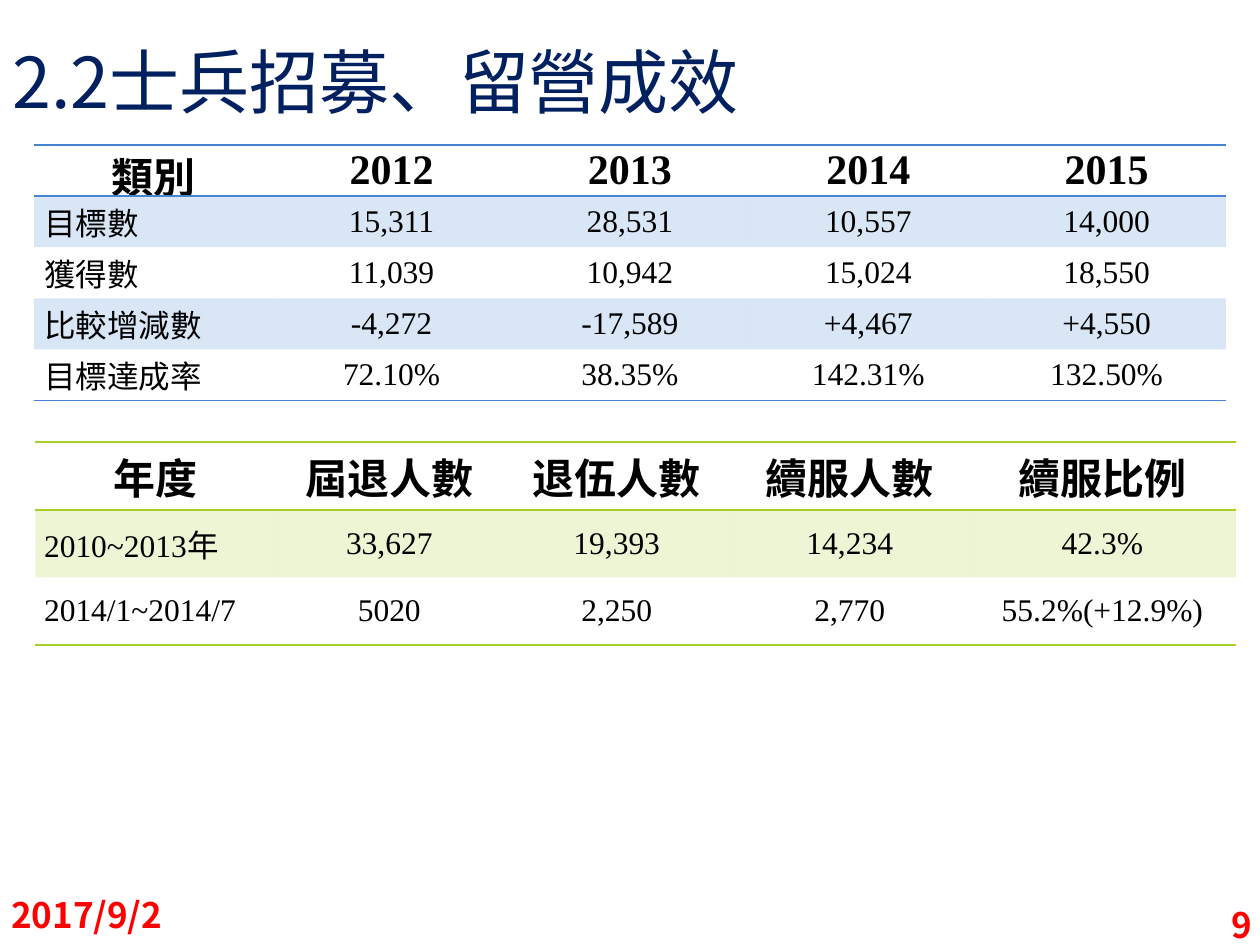
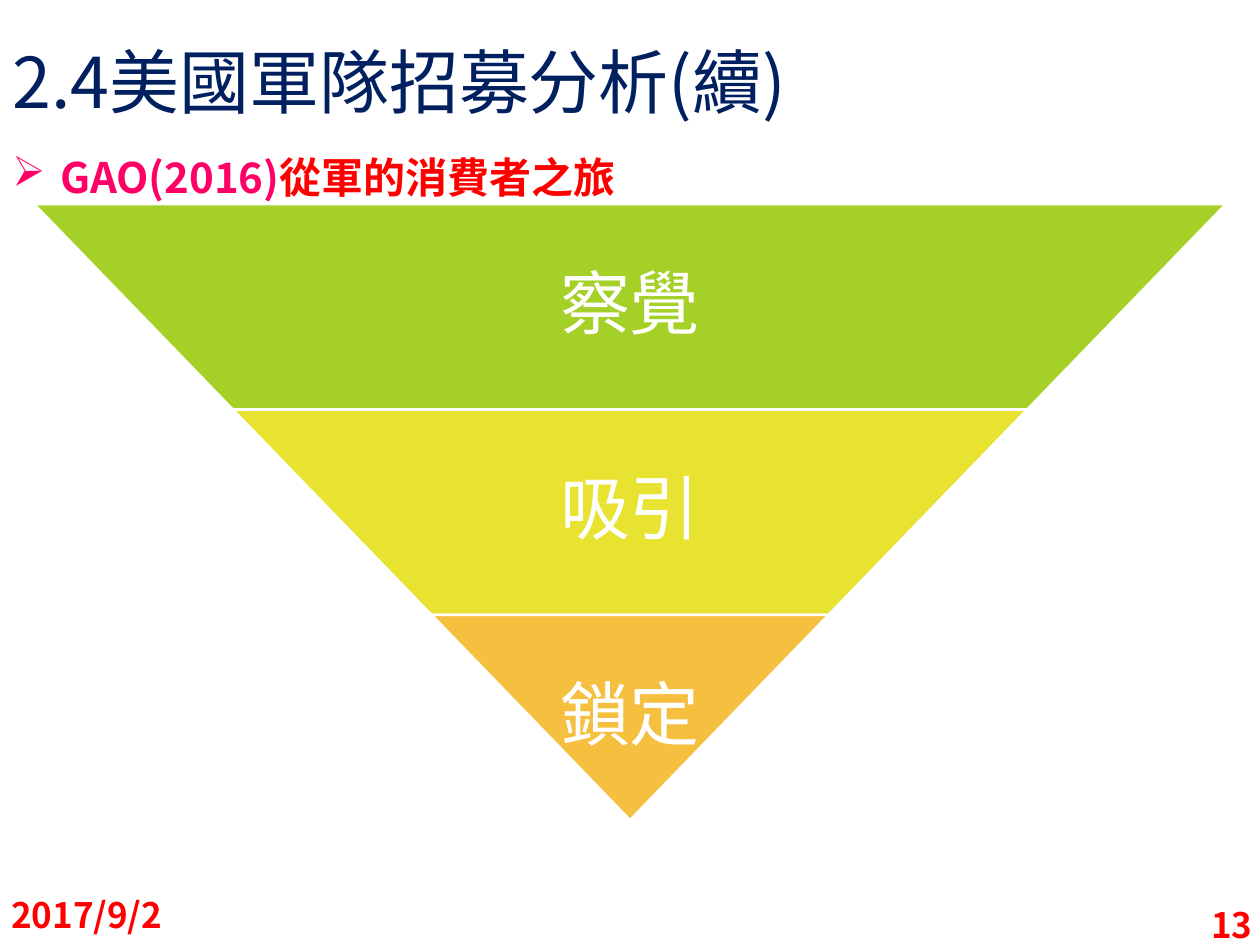
import pptx
import pptx.util
import pptx.dml.color
import pptx.enum.shapes
import pptx.enum.text
import pptx.oxml
import pptx.oxml.ns

COLS, ROWS = 100, 75
SANS, SERIF = "Noto Sans CJK SC", "Times New Roman"
NAVY, RED, PINK, BLACK, WHITE = "002060", "FF0000", "FF0066", "000000", "FFFFFF"
BLUE, GREEN, YELLOW, ORANGE = "4584D3", "A5D028", "E7E330", "F5C040"
NO_STYLE = "{2D5ABB26-0587-4C30-8999-92F81FD0307C}"
ALIGN = pptx.enum.text.PP_ALIGN
MIDDLE = pptx.enum.text.MSO_ANCHOR.MIDDLE

prs = pptx.Presentation()
prs.slide_width = pptx.util.Inches(10)
prs.slide_height = pptx.util.Inches(7.5)


def across(n):
    return round(prs.slide_width * n / COLS)


def down(n):
    return round(prs.slide_height * n / ROWS)


def place(box):
    x, y, w, h = box
    return across(x), down(y), across(w), down(h)


def rgb(color):
    return pptx.dml.color.RGBColor.from_string(color)


def xml(tag, inner="", **attrs):
    attr_text = "".join(f' {k}="{v}"' for k, v in attrs.items())
    ns = pptx.oxml.ns.nsdecls("a")
    return pptx.oxml.parse_xml(f"<a:{tag} {ns}{attr_text}>{inner}</a:{tag}>")


def write(tf, *texts, size=18, colors=(BLACK,), font=SANS, bold=False,
          align=ALIGN.LEFT, spacing=None, bullet=None):
    p = tf.paragraphs[0]
    if bullet:
        indent = across(3.8)
        pPr = p._p.get_or_add_pPr()
        pPr.set("marL", str(indent))
        pPr.set("indent", str(-indent))
        pPr.append(xml("buChar", char=bullet))
    p.alignment = align
    if spacing:
        p.line_spacing = spacing
    for text, color in zip(texts, colors):
        r = p.add_run()
        r.text = text
        r.font.size = pptx.util.Pt(size)
        r.font.bold = bold
        r.font.name = font
        r.font.color.rgb = rgb(color)
        r._r.get_or_add_rPr().append(xml("ea", typeface=SANS))


def add_text(s, box, *texts, anchor=MIDDLE, inset=None, **fmt):
    tf = s.shapes.add_textbox(*place(box)).text_frame
    tf.word_wrap = True
    tf.vertical_anchor = anchor
    if inset is not None:
        tf.margin_left = tf.margin_right = across(inset)
        tf.margin_top = tf.margin_bottom = down(inset)
    write(tf, *texts, **fmt)


def add_page(title, number):
    s = prs.slides.add_slide(prs.slide_layouts[6])
    add_text(s, (0, 1.3, 90, 10.2), title, size=40, colors=[NAVY])
    footer = dict(size=20, colors=[RED], bold=True)
    add_text(s, (-0.1, 70.6, 23.3, 4), "2017/9/2", **footer)
    add_text(s, (77.1, 71.4, 23.3, 4), str(number), align=ALIGN.RIGHT, **footer)
    return s


def rule(cell, side, color):
    fill = f'<a:solidFill><a:srgbClr val="{color}"/></a:solidFill>'
    cell._tc.get_or_add_tcPr().append(xml(side, fill, w=pptx.util.Pt(1)))


def style_cell(cell, text, row, col, last_row, color, inset):
    cell.margin_left = cell.margin_right = across(inset)
    cell.margin_top = cell.margin_bottom = 0
    cell.vertical_anchor = MIDDLE
    if row == 0:
        rule(cell, "lnT", color)
    if row in (0, last_row):
        rule(cell, "lnB", color)
    if row % 2:
        cell.fill.solid()
        cell.fill.fore_color.rgb = rgb(color)
        for clr in cell._tc.tcPr.findall("a:solidFill/a:srgbClr", pptx.oxml.ns._nsmap):
            clr.append(xml("alpha", val=20000))
    else:
        cell.fill.background()
    header = row == 0
    align = ALIGN.CENTER if header or col else ALIGN.JUSTIFY
    write(cell.text_frame, text, size=24 if header else 18, bold=header,
          font=SERIF, align=align)


def add_ruled_table(s, box, rows, color, shares, inset):
    n = len(rows)
    frame = s.shapes.add_table(n, len(shares), *place(box))
    next(frame.element.iter("{*}tableStyleId")).text = NO_STYLE
    table = frame.table
    for column, share in zip(table.columns, shares):
        column.width = across(box[2] * share / sum(shares))
    for i, texts in enumerate(rows):
        table.rows[i].height = down(box[3] / n)
        for j, text in enumerate(texts):
            style_cell(table.cell(i, j), text, i, j, n - 1, color, inset)


def add_funnel(s, box, tiers):
    x, y, w, h = box
    n = len(tiers)
    step, tier_h = w / n, h / n
    for i, (label, color) in enumerate(tiers):
        top, tier_w = y + i * tier_h, w - i * step
        tier_box = (x + i * step / 2, top, tier_w, tier_h)
        sp = s.shapes.add_shape(pptx.enum.shapes.MSO_SHAPE.TRAPEZOID, *place(tier_box))
        sp.rotation = 180
        sp.adjustments[0] = step / 2 / tier_h
        sp.shadow.inherit = False
        sp.fill.solid()
        sp.fill.fore_color.rgb = rgb(color)
        sp.line.color.rgb = rgb(WHITE)
        sp.line.width = pptx.util.Pt(1.5)
        label_w = max(0.65 * tier_w, step)
        add_text(s, (x + (w - label_w) / 2, top, label_w, tier_h), label, inset=0.6,
                 size=40, colors=[WHITE], align=ALIGN.CENTER, spacing=0.9)


def build_results():
    s = add_page("2.2士兵招募、留營成效", 9)
    recruiting = [
        ["類別", "2012", "2013", "2014", "2015"],
        ["目標數", "15,311", "28,531", "10,557", "14,000"],
        ["獲得數", "11,039", "10,942", "15,024", "18,550"],
        ["比較增減數", "-4,272", "-17,589", "+4,467", "+4,550"],
        ["目標達成率", "72.10%", "38.35%", "142.31%", "132.50%"],
    ]
    retention = [
        ["年度", "屆退人數", "退伍人數", "續服人數", "續服比例"],
        ["2010~2013年", "33,627", "19,393", "14,234", "42.3%"],
        ["2014/1~2014/7", "5020", "2,250", "2,770", "55.2%(+12.9%)"],
    ]
    add_ruled_table(s, (2.7, 11.5, 94.6, 20.3), recruiting, BLUE, [1] * 5, 0.8)
    add_ruled_table(s, (2.8, 35.1, 95.3, 16.1), retention, GREEN,
                    [1.91, 1.8, 1.81, 1.89, 2.12], 0.7)


def build_journey():
    s = add_page("2.4美國軍隊招募分析(續)", 13)
    add_funnel(s, (2.7, 16.2, 94.6, 48.9),
               [("察覺", GREEN), ("吸引", YELLOW), ("鎖定", ORANGE)])
    add_text(s, (0, 11.5, 56.3, 5), "GAO(2016)", "從軍的消費者之旅", size=24,
             colors=[PINK, RED], bold=True, bullet="➢",
             anchor=pptx.enum.text.MSO_ANCHOR.TOP)


def main():
    build_results()
    build_journey()
    prs.save("out.pptx")


if __name__ == "__main__":
    main()
